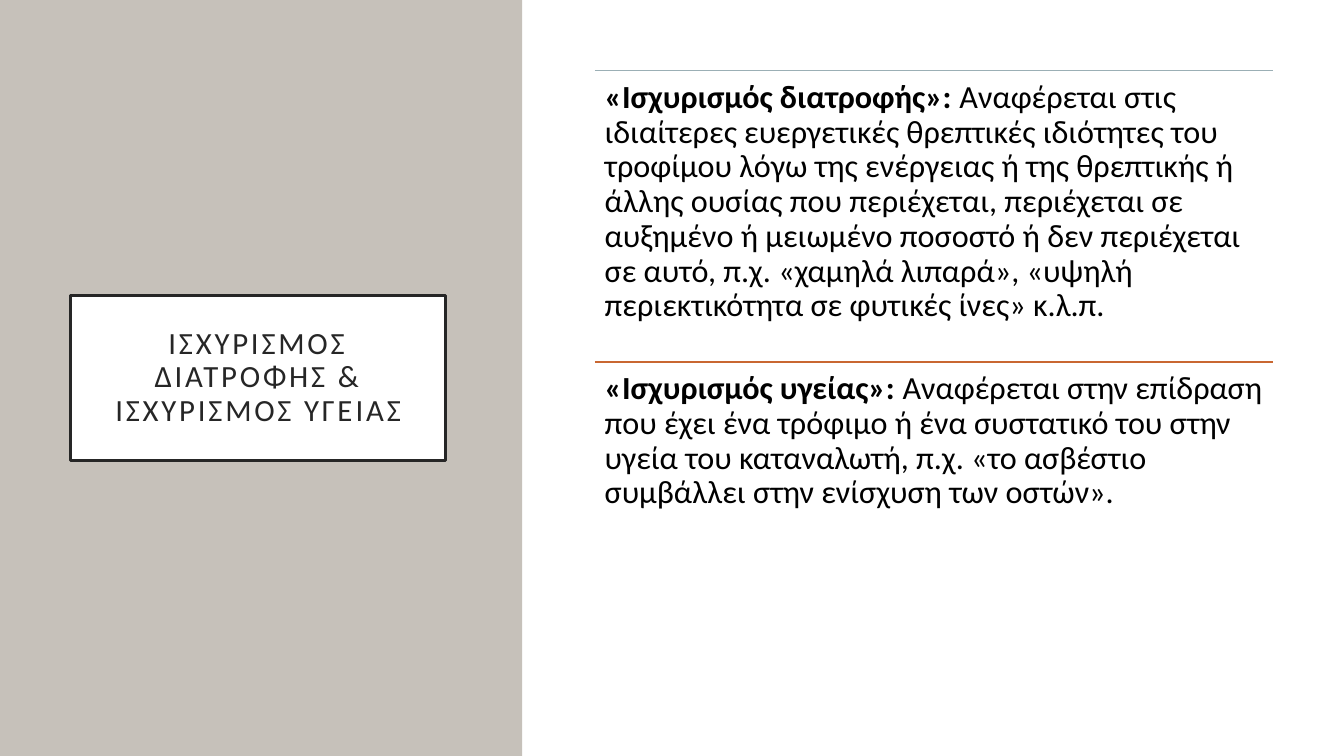
from lxml import etree
from pptx import Presentation
from pptx.dml.color import RGBColor
from pptx.enum.shapes import MSO_CONNECTOR, MSO_SHAPE
from pptx.enum.text import MSO_ANCHOR, MSO_AUTO_SIZE, PP_ALIGN
from pptx.oxml.ns import qn
from pptx.util import Cm, Pt

RECT = MSO_SHAPE.RECTANGLE
STRAIGHT = MSO_CONNECTOR.STRAIGHT
MIDDLE, TOP = MSO_ANCHOR.MIDDLE, MSO_ANCHOR.TOP
CENTER, LEFT = PP_ALIGN.CENTER, PP_ALIGN.LEFT
NO_FIT = MSO_AUTO_SIZE.NONE

SLIDE_W, SLIDE_H = 33.87, 19.05
FONT = "Calibri"
DARK = "262626"

TITLE = "Ισχυρισμός διατροφής & Ισχυρισμός υγείας"
CLAIMS = [
    ("9BAFB5", "«Ισχυρισμός διατροφής»: ",
     "Αναφέρεται στις ιδιαίτερες ευεργετικές θρεπτικές ιδιότητες του τροφίμου "
     "λόγω της ενέργειας ή της θρεπτικής ή άλλης ουσίας που περιέχεται, "
     "περιέχεται σε αυξημένο ή μειωμένο ποσοστό ή δεν περιέχεται σε αυτό, "
     "π.χ. «χαμηλά λιπαρά», «υψηλή περιεκτικότητα σε φυτικές ίνες» κ.λ.π."),
    ("C96731", "«Ισχυρισμός υγείας»: ",
     "Αναφέρεται στην επίδραση που έχει ένα τρόφιμο ή ένα συστατικό του στην "
     "υγεία του καταναλωτή, π.χ. «το ασβέστιο συμβάλλει στην ενίσχυση των οστών»."),
]


def rgb(value):
    return RGBColor.from_string(value)


def add_panel(s, x, y, w, h, color):
    sp = s.shapes.add_shape(RECT, Cm(x), Cm(y), Cm(w), Cm(h))
    sp.shadow.inherit = False
    sp.fill.solid()
    sp.fill.fore_color.rgb = rgb(color)
    sp.line.fill.background()


def format_text(tf, inset, anchor, align, size, color):
    tf.word_wrap = True
    tf.auto_size = NO_FIT
    tf.vertical_anchor = anchor
    tf.margin_left = tf.margin_right = Cm(inset)
    tf.margin_top = tf.margin_bottom = Cm(inset)
    p = tf.paragraphs[0]
    p.alignment = align
    p.line_spacing = 0.9
    p.font.name = FONT
    p.font.size = Pt(size)
    p.font.color.rgb = rgb(color)
    return p


def place_title(s, x, y, w, h):
    sp = s.shapes.title
    s.shapes._spTree.append(sp._element)
    sp.left, sp.top, sp.width, sp.height = Cm(x), Cm(y), Cm(w), Cm(h)
    sp.fill.solid()
    sp.fill.fore_color.rgb = rgb("FFFFFF")
    sp.line.color.rgb = rgb(DARK)
    sp.line.width = Pt(2.5)
    p = format_text(sp.text_frame, 0.51, MIDDLE, CENTER, 22, DARK)
    r = p.add_run()
    r.text = TITLE
    rPr = r._r.get_or_add_rPr()
    rPr.set("cap", "all")
    rPr.set("spc", "200")


def add_rule(s, x, y, w, color):
    line = s.shapes.add_connector(STRAIGHT, Cm(x), Cm(y), Cm(x + w), Cm(y))
    line.line.color.rgb = rgb(color)
    line.line.width = Pt(1)
    etree.SubElement(line._element.spPr, qn("a:effectLst"))


def add_claims(s, x, y, w, h):
    row_h = h / len(CLAIMS)
    for i, (color, term, definition) in enumerate(CLAIMS):
        top = y + i * row_h
        add_rule(s, x, top, w, color)
        box = s.shapes.add_textbox(Cm(x), Cm(top), Cm(w), Cm(row_h))
        p = format_text(box.text_frame, 0.25, TOP, LEFT, 23, "000000")
        p.space_after = Pt(8)
        for text, bold in ((term, True), (definition, False)):
            r = p.add_run()
            r.text = text
            r.font.bold = bold


def main():
    prs = Presentation()
    prs.slide_width, prs.slide_height = Cm(SLIDE_W), Cm(SLIDE_H)
    s = prs.slides.add_slide(prs.slide_layouts[5])
    add_panel(s, 0, 0, 13.16, SLIDE_H, "C6C1BA")
    place_title(s, 1.78, 7.44, 9.45, 4.17)
    add_panel(s, 13.2, 0, SLIDE_W - 13.2, SLIDE_H, "FFFFFF")
    add_claims(s, 14.99, 1.78, 17.09, 14.68)
    prs.save("out.pptx")


if __name__ == "__main__":
    main()
